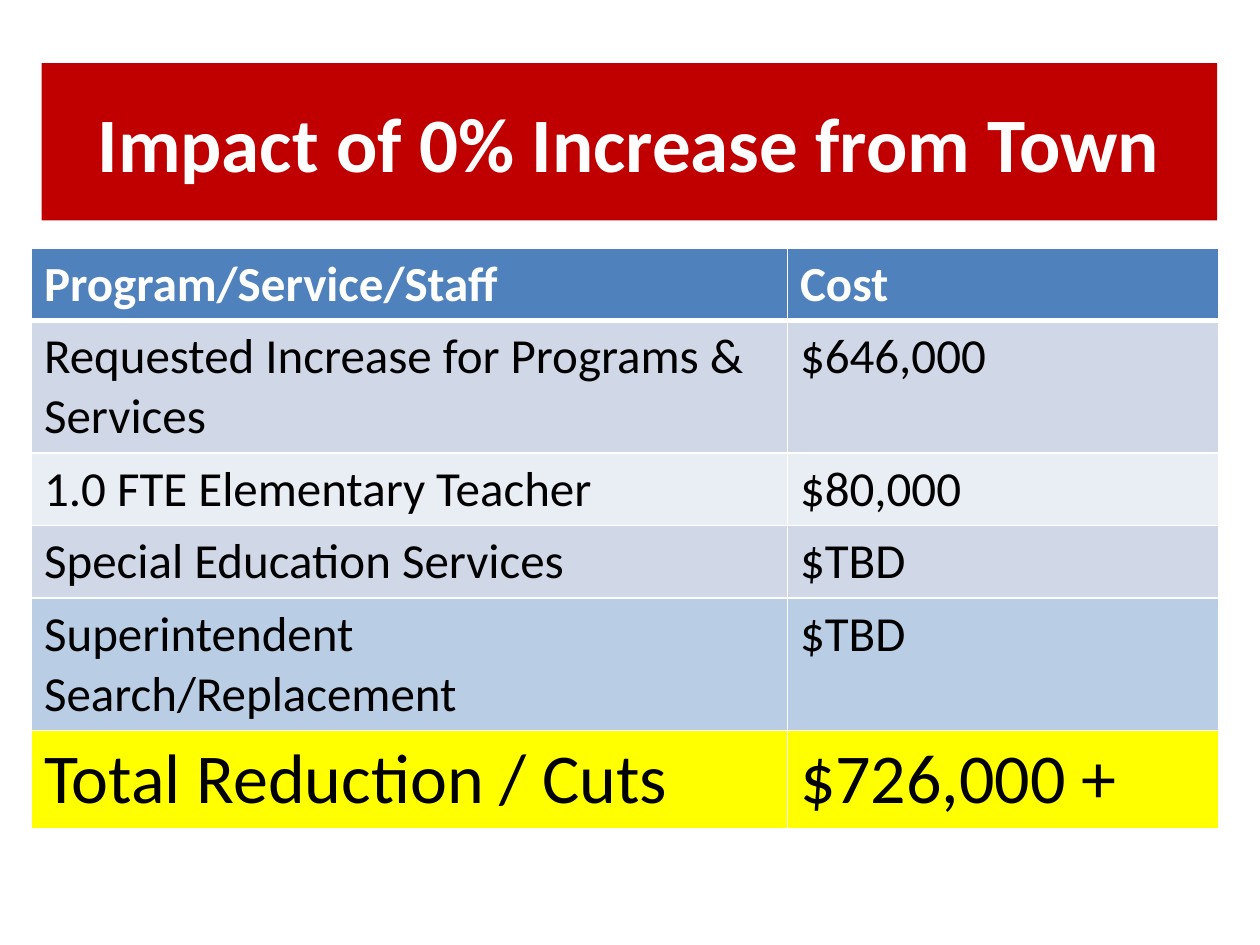
from lxml import etree
from pptx import Presentation
from pptx.dml.color import RGBColor
from pptx.enum.text import MSO_ANCHOR, PP_ALIGN
from pptx.oxml.ns import qn
from pptx.util import Inches, Pt

MIDDLE = MSO_ANCHOR.MIDDLE
CENTER = PP_ALIGN.CENTER

HEADING = "Impact of 0% Increase from Town"
COSTS = [
    ("header", 0.57, "Program/Service/Staff", "Cost"),
    ("band", 1.05, "Requested Increase for Programs & Services", "$646,000"),
    ("light", 0.57, "1.0 FTE Elementary Teacher", "$80,000"),
    ("band", 0.57, "Special Education Services", "$TBD"),
    ("accent", 1.05, "Superintendent Search/Replacement", "$TBD"),
    ("total", 0.77, "Total Reduction / Cuts", "$726,000 +"),
]
COLUMN_WIDTHS = (6, 3.42)
TABLE_LEFT, TABLE_TOP = 0.25, 1.97
HEADING_BOX = {"left": 0.33, "top": 0.5, "width": 9.33, "height": 1.25}

THEME = {
    "font": "Calibri",
    "border": "FFFFFF",
    "title": {"fill": "C00000", "color": "FFFFFF", "size": 44, "bold": True},
    "header": {"fill": "4F81BD", "color": "FFFFFF", "size": 28, "bold": True},
    "band": {"fill": "D0D8E8", "color": "000000", "size": 28, "bold": False},
    "light": {"fill": "E9EDF4", "color": "000000", "size": 28, "bold": False},
    "accent": {"fill": "B9CDE5", "color": "000000", "size": 28, "bold": False},
    "total": {"fill": "FFFF00", "color": "000000", "size": 40, "bold": False},
}


def write(target, text, role):
    style = THEME[role]
    target.fill.solid()
    target.fill.fore_color.rgb = RGBColor.from_string(style["fill"])
    paragraph = target.text_frame.paragraphs[0]
    run = paragraph.add_run()
    run.text = text
    font_format = {"name": THEME["font"], "size": Pt(style["size"]), "bold": style["bold"]}
    for attribute, value in font_format.items():
        setattr(run.font, attribute, value)
    run.font.color.rgb = RGBColor.from_string(style["color"])
    return paragraph


def outline(cell, bottom):
    properties = cell._tc.get_or_add_tcPr()
    edges = {"a:lnL": 1, "a:lnR": 1, "a:lnT": 1, "a:lnB": bottom}
    for position, (edge, width) in enumerate(edges.items()):
        line = etree.Element(qn(edge), w=str(Pt(width)))
        fill = etree.SubElement(line, qn("a:solidFill"))
        etree.SubElement(fill, qn("a:srgbClr"), val=THEME["border"])
        properties.insert(position, line)


def add_heading(slide):
    heading = slide.shapes.title
    for attribute, value in HEADING_BOX.items():
        setattr(heading, attribute, Inches(value))
    heading.text_frame.vertical_anchor = MIDDLE
    write(heading, HEADING, "title").alignment = CENTER


def add_costs(slide):
    costs = slide.shapes.add_table(
        len(COSTS), len(COLUMN_WIDTHS), Inches(TABLE_LEFT), Inches(TABLE_TOP),
        Inches(sum(COLUMN_WIDTHS)), Inches(sum(row[1] for row in COSTS)),
    ).table
    for column, width in zip(costs.columns, COLUMN_WIDTHS):
        column.width = Inches(width)
    for row, (role, height, *texts) in zip(costs.rows, COSTS):
        row.height = Inches(height)
        for cell, text in zip(row.cells, texts):
            write(cell, text, role)
            outline(cell, 3 if role == "header" else 1)


def main():
    deck = Presentation()
    deck.slide_width, deck.slide_height = Inches(10), Inches(7.5)
    slide = deck.slides.add_slide(deck.slide_layouts[5])
    add_heading(slide)
    add_costs(slide)
    deck.save("out.pptx")


if __name__ == "__main__":
    main()
